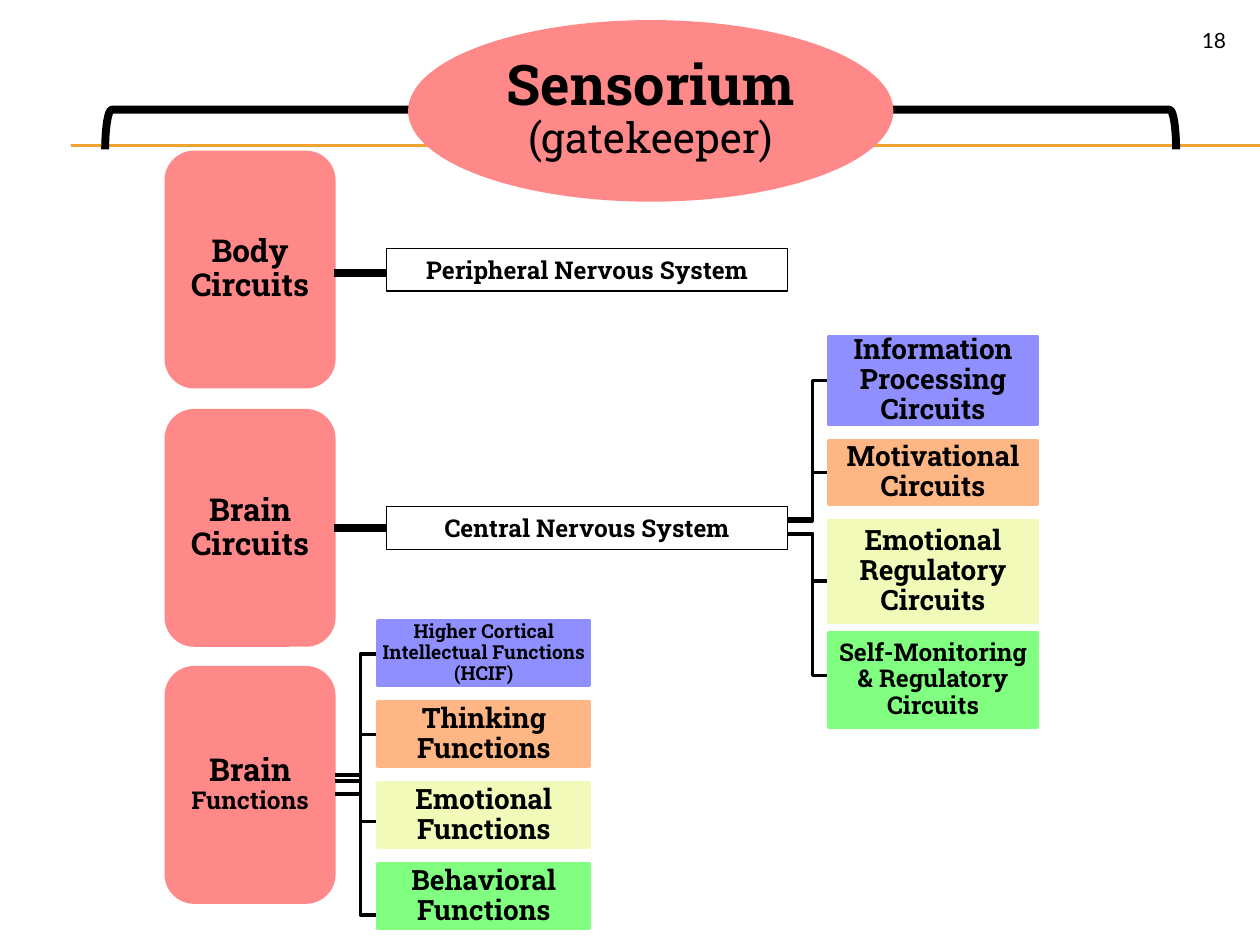
from lxml.etree import SubElement
from pptx import Presentation
from pptx.dml.color import RGBColor
from pptx.enum.shapes import MSO_CONNECTOR as Connector, MSO_SHAPE as Shape
from pptx.enum.text import MSO_ANCHOR as Anchor, MSO_AUTO_SIZE as AutoSize, PP_ALIGN as Align
from pptx.oxml.ns import qn
from pptx.util import Inches, Pt

FONT = "Roboto Slab"
BLACK, WHITE, GOLD, CORAL = "000000", "FFFFFF", "F0A22E", "FF8989"
TIER_COLOURS = ["8F8FFF", "FFB685", "F1FAB8", "81FF81"]
CARD_LEFT, CARD_WIDTH, CARD_HEIGHT = 1.32, 1.33, 1.86
SYSTEM_LEFT, SYSTEM_WIDTH = 3.07, 3.18


def colour(value):
    """Turn a hex string into a colour."""
    return RGBColor.from_string(value)


def inches(*lengths):
    """Convert several lengths to inches."""
    return [Inches(length) for length in lengths]


def set_line(item, value, width):
    """Set the colour and width of a line."""
    item.line.color.rgb = colour(value)
    item.line.width = Pt(width)


def write(frame, paragraphs, insets=(0.1, 0.05), spacing=1.0, align=Align.CENTER,
          anchor=Anchor.MIDDLE, font=FONT):
    """Write paragraphs of (text, size, bold) runs into a text frame."""
    frame.word_wrap = True
    frame.auto_size = AutoSize.NONE
    frame.vertical_anchor = anchor
    frame.margin_left = frame.margin_right = Inches(insets[0])
    frame.margin_top = frame.margin_bottom = Inches(insets[1])
    for index, runs in enumerate(paragraphs):
        para = frame.add_paragraph() if index else frame.paragraphs[0]
        para.alignment = align
        para.line_spacing = spacing
        para.space_before = Pt(0)
        for text, size, bold in runs:
            span = para.add_run()
            span.text = text
            span.font.name = font
            span.font.size = Pt(size)
            span.font.bold = bold
            span.font.color.rgb = colour(BLACK)


def add_box(page, kind, place, fill, line, width):
    """Add a filled and outlined preset shape."""
    box = page.shapes.add_shape(kind, *inches(*place))
    box.shadow.inherit = False
    box.fill.solid()
    box.fill.fore_color.rgb = colour(fill)
    set_line(box, line, width)
    return box


def add_card(page, top, runs):
    """Add a rounded card of the left column."""
    place = (CARD_LEFT, top, CARD_WIDTH, CARD_HEIGHT)
    card = add_box(page, Shape.ROUNDED_RECTANGLE, place, CORAL, CORAL, 2)
    write(card.text_frame, [runs], (0.07, 0.04), 0.9)
    return card


def add_system(page, top, text):
    """Add a white box that names a nervous system."""
    place = (SYSTEM_LEFT, top, SYSTEM_WIDTH, 0.34)
    box = add_box(page, Shape.RECTANGLE, place, WHITE, BLACK, 0.75)
    write(box.text_frame, [[(text, 14, True)]])
    return box


def add_line(page, start, end, value, width):
    """Add a straight line without a shadow."""
    line = page.shapes.add_connector(Connector.STRAIGHT, *inches(*start, *end))
    set_line(line, value, width)
    SubElement(line.element.spPr, qn("a:effectLst"))
    return line


def add_branch(page, left, start, end):
    """Add a stepped branch from one height to another."""
    builder = page.shapes.build_freeform(*inches(left, start))
    points = [(left + 0.2, start), (left + 0.2, end), (left + 0.39, end)]
    builder.add_line_segments([inches(*point) for point in points], close=False)
    branch = builder.convert_to_shape()
    branch.shadow.inherit = False
    branch.fill.background()
    set_line(branch, BLACK, 2)


def add_tree(page, trunk, left, width, branches, leaves):
    """Add branches and the column of coloured boxes they lead to."""
    for start, end in branches:
        add_branch(page, trunk, start, end)
    for value, (top, height, text, size) in zip(TIER_COLOURS, leaves):
        box = add_box(page, Shape.RECTANGLE, (left, top, width, height), value, value, 2)
        write(box.text_frame, [[(text, size, True)]], (0.01, 0.01), 0.9)


def add_heading(page):
    """Add the wide brace, the ellipse and the title on it."""
    brace = page.shapes.add_shape(Shape.RIGHT_BRACE, *inches(4.77, -3.38, 0.63, 8.5))
    brace.rotation = 270
    brace.shadow.inherit = False
    brace.fill.background()
    set_line(brace, BLACK, 4.5)
    ellipse = add_box(page, Shape.OVAL, (3.25, 0.17, 3.83, 1.42), CORAL, CORAL, 1.5)
    title = page.shapes.title
    title.left, title.top, title.width, title.height = inches(3.81, 0.37, 2.71, 1)
    write(title.text_frame, [[("Sensorium", 32, True)], [("(gatekeeper)", 24, False)]],
          (0.02, 0.02), 0.9)
    ellipse.element.addnext(title.element)


def add_page_number(page):
    """Add the page number in the top right corner."""
    box = page.shapes.add_textbox(*inches(9, 0.17, 0.83, 0.27))
    write(box.text_frame, [[("18", 12, False)]], align=Align.RIGHT, anchor=Anchor.TOP, font="Lato")


def main():
    """Build and save the deck."""
    deck = Presentation()
    deck.slide_width, deck.slide_height = inches(10, 7.5)
    page = deck.slides.add_slide(deck.slide_layouts[5])
    for height in (1.15, 1.16):
        add_line(page, (0.56, height), (10, height), GOLD, 0.75)

    add_card(page, 1.21, [("Body Circuits", 18, True)])
    brain_card = add_card(page, 3.26, [("Brain Circuits", 18, True)])
    add_card(page, 5.3, [("Brain ", 18, True), ("Functions", 14, True)])

    functions = [("Higher Cortical Intellectual Functions (HCIF)", 11), ("Thinking Functions", 16),
                 ("Emotional Functions", 16), ("Behavioral Functions", 16)]
    add_tree(page, 2.66, 3, 1.68, [(6.15, 7.26), (6.15, 6.52), (6.2, 5.83), (6.3, 5.19)],
             [(4.93 + 0.643 * row, 0.51, *entry) for row, entry in enumerate(functions)])
    add_tree(page, 6.25, 6.58, 1.65, [(4.24, 5.36), (4.24, 4.61), (4.12, 3.75), (4.14, 3.02)],
             [(2.67, 0.7, "Information Processing Circuits", 16),
              (3.5, 0.5, "Motivational Circuits", 16),
              (4.13, 0.81, "Emotional Regulatory Circuits", 16),
              (5.02, 0.75, "Self-Monitoring & Regulatory Circuits", 14)])

    add_system(page, 1.97, "Peripheral Nervous System")
    central = add_system(page, 4.02, "Central Nervous System")
    card_right = CARD_LEFT + CARD_WIDTH
    add_line(page, (card_right, 2.17), (SYSTEM_LEFT, 2.17), BLACK, 4.5)
    link = add_line(page, (card_right, 4.19), (SYSTEM_LEFT, 4.19), BLACK, 4.5)
    link.begin_connect(brain_card, 3)
    link.end_connect(central, 1)

    add_heading(page)
    add_page_number(page)
    deck.save("out.pptx")


if __name__ == "__main__":
    main()
